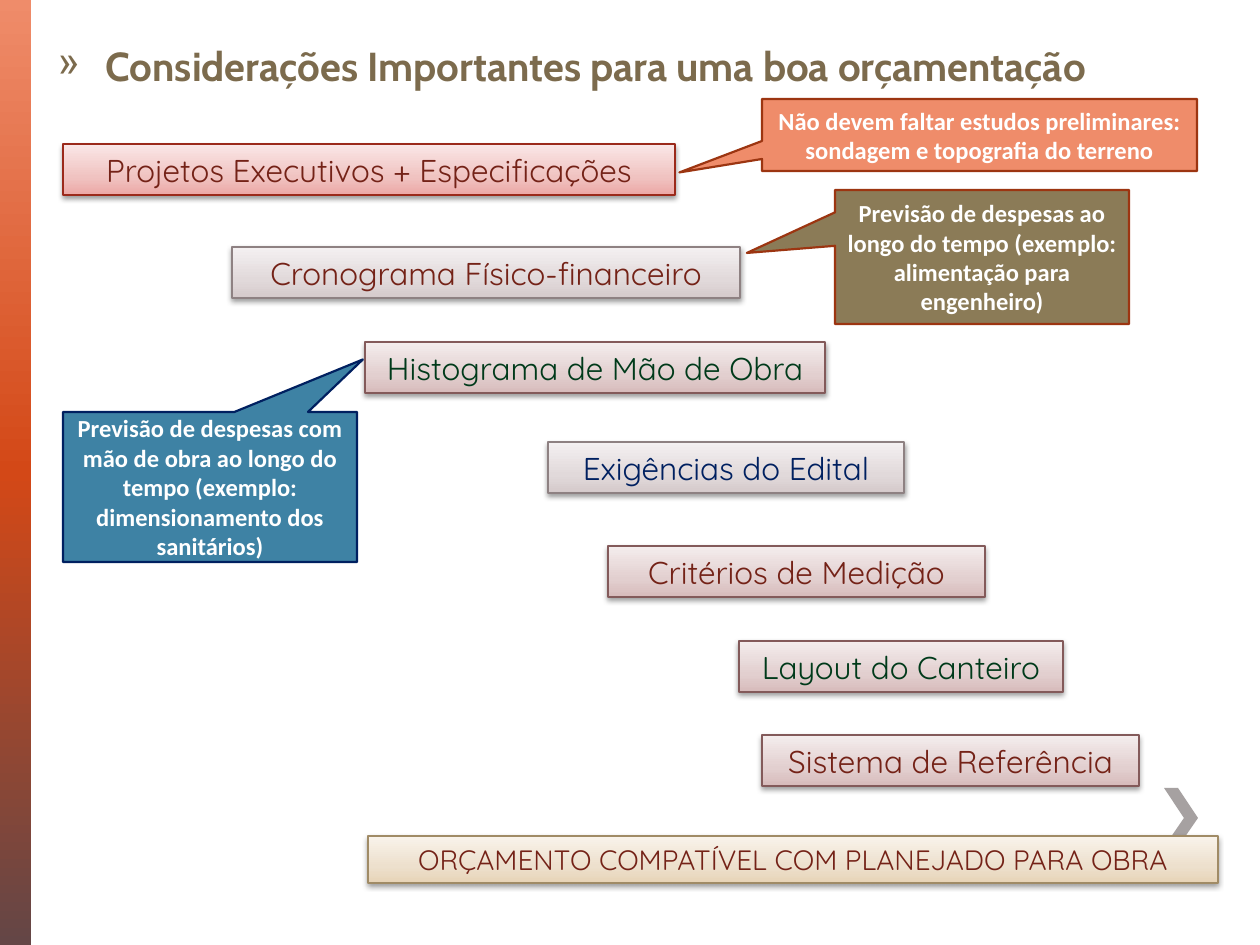
"""Build the slide on what a good construction budget has to consider."""
from copy import deepcopy
from dataclasses import dataclass

from lxml import etree
from pptx import Presentation
from pptx import util as u
from pptx.dml.color import RGBColor
from pptx.enum import shapes, text
from pptx.oxml.ns import qn

SCALE = 914400 / 126
WHITE = RGBColor(0xFF, 0xFF, 0xFF)
OLIVE = RGBColor(0x7C, 0x6B, 0x4D)
KHAKI = RGBColor(0x8B, 0x7B, 0x57)
CORAL = RGBColor(0xEF, 0x8C, 0x6A)
ORANGE = RGBColor(0xD3, 0x48, 0x17)
PLUM = RGBColor(0x64, 0x46, 0x46)
RUST = RGBColor(0x9C, 0x35, 0x11)
BLUE = RGBColor(0x3E, 0x82, 0xA4)
NAVY = RGBColor(0x00, 0x20, 0x60)
MAROON = RGBColor(0x74, 0x22, 0x17)
GREEN = RGBColor(0x00, 0x3A, 0x1A)
GRAY = RGBColor(0xA6, 0xA1, 0xA1)


@dataclass(frozen=True)
class Theme:
    """Gradient stops, given as position and colour, with the outline."""
    stops: tuple[tuple[float, RGBColor], ...]
    line: RGBColor


def theme(low: str, mid: str, high: str, line: str) -> Theme:
    """Make a label theme from hex colours, bottom to top."""
    colors = [RGBColor.from_string(c) for c in (low, mid, high)]
    return Theme(tuple(zip((0, 0.35, 1), colors)), RGBColor.from_string(line))


RED = theme("ECA8A6", "F0C3C1", "FAE7E7", "9B2A1B")
MAUVE = theme("D5CACB", "E1D9DA", "F4F0F1", "8E8182")
ROSE = theme("D7BBBB", "E2CFCF", "F4EDED", "835A5A")
SAND = theme("E7D4B7", "EDE0CD", "F9F3EB", "A08B66")


@dataclass(frozen=True)
class Label:
    """A step of the staircase; box is left, top, width, height in px."""
    words: str
    box: tuple[int, int, int, int]
    theme: Theme
    color: RGBColor = MAROON
    size: float = 18


@dataclass(frozen=True)
class Callout:
    """A note whose tip is an offset from its centre, in box fractions."""
    words: str
    box: tuple[int, int, int, int]
    tip: tuple[float, float]
    fill: RGBColor
    line: RGBColor = RUST


LABELS = (
    Label("Cronograma Físico-financeiro", (232, 247, 508, 51), MAUVE),
    Label("Projetos Executivos + Especificações", (63, 144, 612, 51), RED),
    Label("Critérios de Medição", (608, 546, 377, 51), ROSE),
    Label("Histograma de Mão de Obra", (365, 342, 460, 51), ROSE, GREEN),
    Label("ORÇAMENTO COMPATÍVEL COM PLANEJADO PARA OBRA",
          (368, 836, 850, 47), SAND, size=16),
    Label("Exigências do Edital", (548, 442, 356, 51), MAUVE, NAVY),
    Label("Layout do Canteiro", (739, 641, 324, 51), ROSE, GREEN),
    Label("Sistema de Referência", (762, 735, 377, 51), ROSE),
)
CALLOUTS = (
    Callout("Não devem faltar estudos preliminares: sondagem e topografia do terreno",
            (762, 99, 435, 72), (-0.69, 0.52), CORAL),
    Callout("Previsão de despesas ao longo do tempo (exemplo: alimentação para engenheiro)",
            (835, 190, 294, 134), (-0.8, -0.03), KHAKI),
    Callout("Previsão de despesas com mão de obra ao longo do tempo "
            "(exemplo: dimensionamento dos sanitários)",
            (63, 412, 294, 150), (0.52, -0.85), BLUE, NAVY),
)
CHEVRON = ((1178, 788), (1164, 788), (1184, 818), (1164, 847), (1178, 847), (1198, 818))


def px(n: int) -> u.Emu:
    """Turn px into EMU."""
    return u.Emu(round(n * SCALE))


def write(sp, words: str, *, font: str, size: float, color: RGBColor, bold: bool = False,
          align=text.PP_ALIGN.CENTER, anchor=text.MSO_ANCHOR.MIDDLE):
    """Put one formatted paragraph in a shape and return it."""
    tf = sp.text_frame
    tf.word_wrap = True
    tf.vertical_anchor = anchor
    p = tf.paragraphs[0]
    p.alignment = align
    r = p.add_run()
    r.text = words
    r.font.name, r.font.size, r.font.bold = font, u.Pt(size), bold
    r.font.color.rgb = color
    return p


def add_box(slide, kind, box: tuple[int, int, int, int]):
    """Add a shape without shadow at a px box."""
    sp = slide.shapes.add_shape(kind, *map(px, box))
    sp.shadow.inherit = False
    return sp


def fill_gradient(sp, stops: tuple[tuple[float, RGBColor], ...], angle: int) -> None:
    """Fill a shape with a linear gradient of three stops."""
    sp.fill.gradient()
    sp.fill.gradient_angle = angle
    gs_list = sp._element.spPr.find(".//" + qn("a:gsLst"))
    gs_list.append(deepcopy(gs_list[0]))
    for stop, (position, color) in zip(sp.fill.gradient_stops, stops):
        stop.position = position
        stop.color.rgb = color


def set_line(sp, color: RGBColor, width: float) -> None:
    """Outline a shape."""
    sp.line.color.rgb = color
    sp.line.width = u.Pt(width)


def add_shadow(sp) -> None:
    """Give a shape a soft shadow below it."""
    effects = sp._element.spPr.find(qn("a:effectLst"))
    shadow = etree.SubElement(effects, qn("a:outerShdw"), blurRad=str(u.Pt(3.1)),
                              dist=str(u.Pt(1.6)), dir="5400000", rotWithShape="0")
    color = etree.SubElement(shadow, qn("a:srgbClr"), val="000000")
    etree.SubElement(color, qn("a:alpha"), val="38000")


def add_title(slide) -> None:
    """Place the bulleted title."""
    sp = slide.shapes.title
    sp.left, sp.top, sp.width, sp.height = map(px, (45, 35, 1170, 102))
    p = write(sp, "Considerações Importantes para uma boa orçamentação", font="Cabin",
              size=23.1, color=OLIVE, bold=True, align=text.PP_ALIGN.JUSTIFY,
              anchor=text.MSO_ANCHOR.TOP)
    sp.text_frame.auto_size = text.MSO_AUTO_SIZE.NONE
    p_pr = p._p.get_or_add_pPr()
    p_pr.set("marL", str(px(48)))
    p_pr.set("indent", str(-px(48)))
    etree.SubElement(p_pr, qn("a:buChar"), char="»")


def add_decoration(slide) -> None:
    """Draw the side bar and the chevron."""
    bar = add_box(slide, shapes.MSO_SHAPE.RECTANGLE, (0, 0, 31, 945))
    fill_gradient(bar, ((0, CORAL), (0.5, ORANGE), (1, PLUM)), 270)
    bar.line.fill.background()
    builder = slide.shapes.build_freeform(*CHEVRON[0], scale=SCALE)
    builder.add_line_segments(CHEVRON[1:], close=True)
    chevron = builder.convert_to_shape()
    chevron.shadow.inherit = False
    chevron.fill.solid()
    chevron.fill.fore_color.rgb = GRAY
    chevron.line.fill.background()


def add_label(slide, label: Label) -> None:
    """Draw one step."""
    sp = add_box(slide, shapes.MSO_SHAPE.RECTANGLE, label.box)
    fill_gradient(sp, label.theme.stops, 90)
    set_line(sp, label.theme.line, 0.75)
    add_shadow(sp)
    write(sp, label.words, font="Quicksand", size=label.size, color=label.color)


def add_callout(slide, note: Callout) -> None:
    """Draw one note."""
    sp = add_box(slide, shapes.MSO_SHAPE.RECTANGULAR_CALLOUT, note.box)
    sp.adjustments[0], sp.adjustments[1] = note.tip
    sp.fill.solid()
    sp.fill.fore_color.rgb = note.fill
    set_line(sp, note.line, 1.25)
    write(sp, note.words, font="Calibri", size=14, color=WHITE, bold=True)


def main() -> None:
    """Build and save the slide."""
    prs = Presentation()
    prs.slide_width, prs.slide_height = px(1260), px(945)
    slide = prs.slides.add_slide(prs.slide_layouts[5])
    add_title(slide)
    add_decoration(slide)
    for label in LABELS:
        add_label(slide, label)
    for note in CALLOUTS:
        add_callout(slide, note)
    prs.save("out.pptx")


if __name__ == "__main__":
    main()
